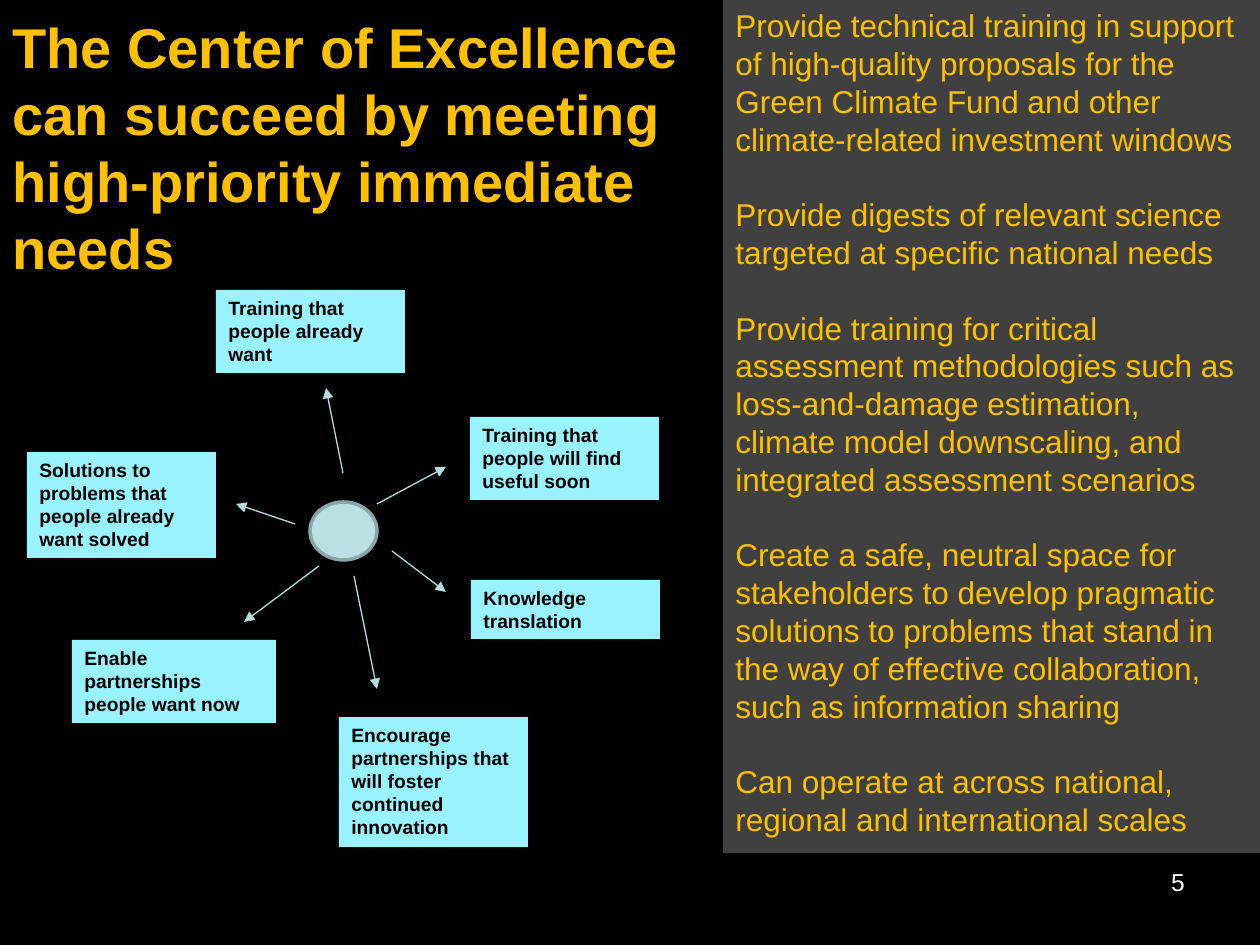
from dataclasses import dataclass

from lxml import etree
from pptx import Presentation
from pptx.dml.color import RGBColor
from pptx.enum.shapes import MSO_CONNECTOR, MSO_SHAPE
from pptx.enum.text import MSO_ANCHOR, PP_ALIGN
from pptx.oxml.ns import qn
from pptx.util import Pt

RECTANGLE = MSO_SHAPE.RECTANGLE
OVAL = MSO_SHAPE.OVAL
STRAIGHT = MSO_CONNECTOR.STRAIGHT
TOP, MIDDLE = MSO_ANCHOR.TOP, MSO_ANCHOR.MIDDLE
LEFT, RIGHT = PP_ALIGN.LEFT, PP_ALIGN.RIGHT
PX = 914400 // 126


@dataclass(frozen=True)
class Theme:
    font: str = "Arial"
    background: str = "000000"
    panel: str = "404040"
    gold: str = "FFC000"
    white: str = "FFFFFF"
    black: str = "000000"
    need: str = "99F3FF"
    hub: str = "BBE0E3"
    hub_edge: str = "8AA6A8"
    arrow: str = "B6DCDF"
    title_size: int = 32
    panel_size: int = 18
    number_size: int = 14
    need_size: int = 11


theme = Theme()


def rgb(value):
    return RGBColor.from_string(value)


def add_text(page, texts, place, size, color, fill=None, bold=False,
             align=LEFT, anchor=TOP, gap=0):
    """Add a box of paragraphs; a fill makes it a rectangle."""
    place = [value * PX for value in place]
    if fill:
        box = page.shapes.add_shape(RECTANGLE, *place)
        box.shadow.inherit = False
        box.fill.solid()
        box.fill.fore_color.rgb = rgb(fill)
        box.line.fill.background()
    else:
        box = page.shapes.add_textbox(*place)
    frame = box.text_frame
    frame.word_wrap = True
    frame.vertical_anchor = anchor
    for index, text in enumerate(texts):
        para = frame.add_paragraph() if index else frame.paragraphs[0]
        para.alignment = align
        if index:
            para.space_before = Pt(gap)
        span = para.add_run()
        span.text = text
        span.font.name = theme.font
        span.font.size = Pt(size)
        span.font.bold = bold
        span.font.color.rgb = rgb(color)


deck = Presentation()
deck.slide_width = 1260 * PX
deck.slide_height = 945 * PX
page = deck.slides.add_slide(deck.slide_layouts[6])
page.background.fill.solid()
page.background.fill.fore_color.rgb = rgb(theme.background)

# Side panel of activities
activities = [
    "Provide technical training in support of high-quality proposals for the "
    "Green Climate Fund and other climate-related investment windows",
    "Provide digests of relevant science targeted at specific national needs",
    "Provide training for critical assessment methodologies such as "
    "loss-and-damage estimation, climate model downscaling, and integrated "
    "assessment scenarios",
    "Create a safe, neutral space for stakeholders to develop pragmatic "
    "solutions to problems that stand in the way of effective collaboration, "
    "such as information sharing",
    "Can operate at across national, regional and international scales",
]
add_text(page, activities, (723, 0, 537, 853), theme.panel_size, theme.gold,
         fill=theme.panel, gap=21.6)

# Slide number and title
add_text(page, ["5"], (903, 861, 294, 66), theme.number_size, theme.white,
         align=RIGHT)
add_text(page, ["The Center of Excellence can succeed by meeting "
                "high-priority immediate needs"],
         (0, 45, 725, 203), theme.title_size, theme.gold, bold=True,
         anchor=MIDDLE)

# Needs around the hub
needs = [
    ("Training that people already want", (216, 290, 189, 83)),
    ("Knowledge translation", (471, 580, 189, 59)),
    ("Enable partnerships people want now", (72, 640, 204, 83)),
    ("Training that people will find useful soon", (470, 417, 189, 83)),
    ("Solutions to problems that people already want solved",
     (27, 452, 189, 106)),
    ("Encourage partnerships that will foster continued innovation",
     (339, 717, 189, 130)),
]
for text, place in needs:
    add_text(page, [text], place, theme.need_size, theme.black,
             fill=theme.need, bold=True)

# Hub
hub = page.shapes.add_shape(OVAL, 310 * PX, 502 * PX, 67 * PX, 58 * PX)
hub.shadow.inherit = False
hub.fill.solid()
hub.fill.fore_color.rgb = rgb(theme.hub)
hub.line.color.rgb = rgb(theme.hub_edge)
hub.line.width = Pt(2)

# Arrows from the hub towards each need
arrows = [
    (343, 473, 326, 388),
    (377, 504, 446, 467),
    (392, 551, 446, 592),
    (354, 576, 377, 689),
    (319, 566, 244, 622),
    (295, 524, 236, 504),
]
for ends in arrows:
    arrow = page.shapes.add_connector(STRAIGHT, *[end * PX for end in ends])
    arrow.line.color.rgb = rgb(theme.arrow)
    arrow.line.width = Pt(0.75)
    line = arrow.line._get_or_add_ln()
    etree.SubElement(line, qn("a:tailEnd"), type="triangle")
    etree.SubElement(arrow._element.spPr, qn("a:effectLst"))

deck.save("out.pptx")
